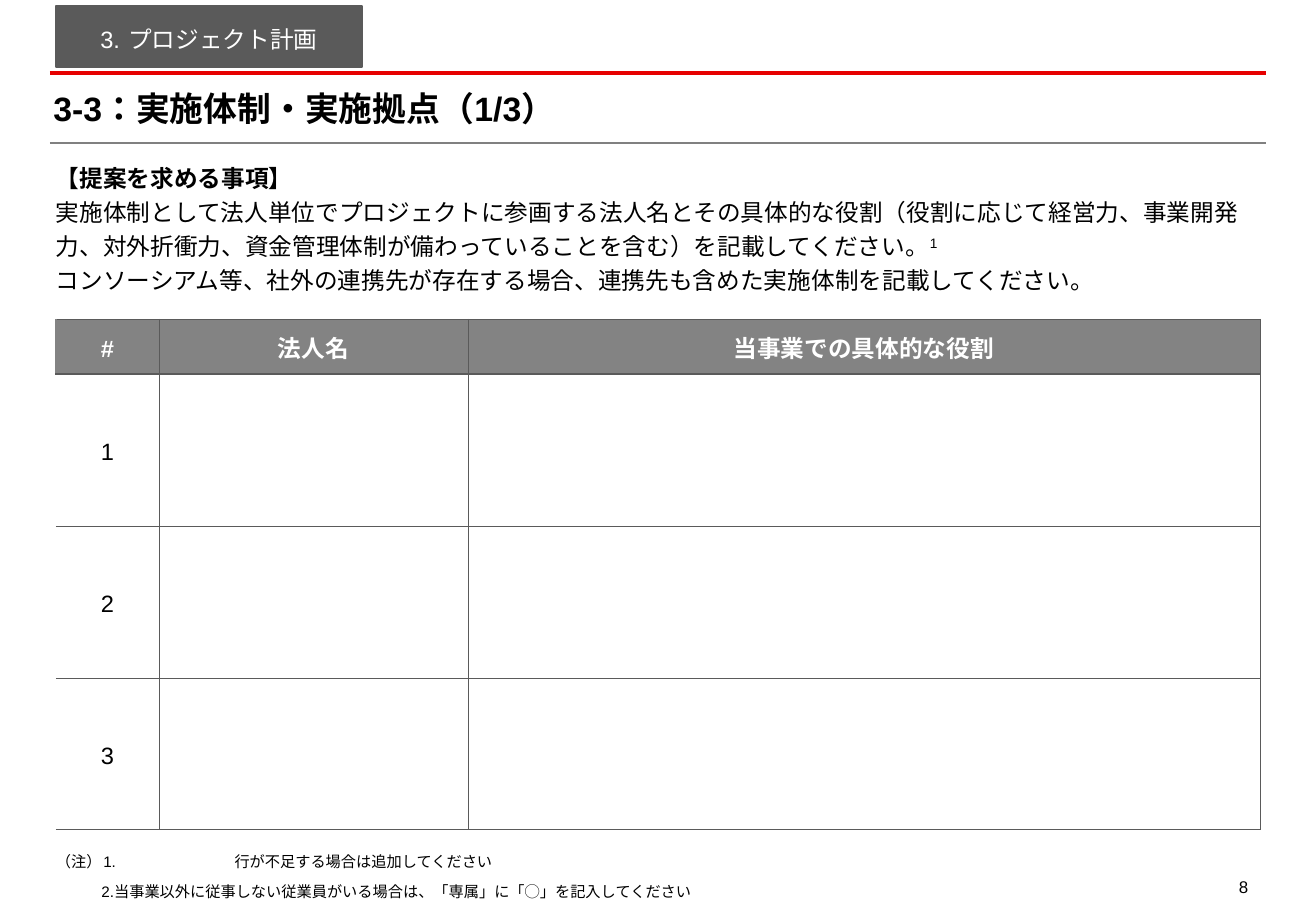
from lxml import etree
from pptx import Presentation
from pptx import util as u
from pptx.dml.color import RGBColor
from pptx.enum import lang, shapes, text
from pptx.oxml import ns

COLORS = {"ink": "000000", "white": "FFFFFF", "red": "E60000", "rule": "808080",
          "tab": "5A5A5A", "head": "838383"}
LEFT, WIDTH = 4.25, 91.5  # content column, percent of slide width
CENTER, RIGHT = text.PP_ALIGN.CENTER, text.PP_ALIGN.RIGHT
MIDDLE, BOTTOM = text.MSO_ANCHOR.MIDDLE, text.MSO_ANCHOR.BOTTOM


def rgb(name):
    return RGBColor.from_string(COLORS[name])


def sub(parent, tag, **attrs):
    return etree.SubElement(parent, ns.qn(tag), **attrs)


class Deck:
    """Slide style and current slide; lengths are percent of the slide's size."""

    font = "Arial"

    def __init__(self, width, height):
        self.prs = Presentation()
        self.prs.slide_width, self.prs.slide_height = u.Inches(width), u.Inches(height)
        self.s = self.prs.slides.add_slide(self.prs.slide_layouts[5])

    def x(self, share):
        return round(self.prs.slide_width * share / 100)

    def y(self, share):
        return round(self.prs.slide_height * share / 100)

    def box(self, x, y, w, h):
        return self.x(x), self.y(y), self.x(w), self.y(h)

    def style(self, p, size, color="ink", bold=False, align=None, spacing=1.2):
        p.alignment = align or text.PP_ALIGN.LEFT
        p.line_spacing = spacing
        for r in p.runs:
            f = r.font
            f.size, f.bold, f.name = u.Pt(size), bold, self.font
            f.color.rgb = rgb(color)
            f.language_id = lang.MSO_LANGUAGE_ID.JAPANESE
            sub(f._element, "a:ea", typeface=self.font)

    def frame(self, tf, margin=0, anchor=None, wrap=True):
        tf.margin_left = tf.margin_right = tf.margin_top = tf.margin_bottom = u.Inches(margin)
        tf.word_wrap = wrap
        tf.auto_size = text.MSO_AUTO_SIZE.NONE
        tf.vertical_anchor = anchor or text.MSO_ANCHOR.TOP

    def hang(self, p, indent):
        pPr = p._p.get_or_add_pPr()
        pPr.set("marL", str(u.Inches(indent)))
        pPr.set("indent", str(-u.Inches(indent)))
        return pPr

    def title(self, box, words):
        sp = self.s.shapes.title
        sp.left, sp.top, sp.width, sp.height = self.box(*box)
        tf = sp.text_frame
        tf.text = words
        self.frame(tf, anchor=MIDDLE)
        self.style(tf.paragraphs[0], 20, bold=True, spacing=1.0)

    def text(self, box, lines, size, anchor=None, align=None, wrap=True, margin=0):
        tf = self.s.shapes.add_textbox(*self.box(*box)).text_frame
        tf.text = "\n".join(lines)
        self.frame(tf, margin, anchor, wrap)
        for p in tf.paragraphs:
            self.style(p, size, align=align)
        return tf.paragraphs

    def rule(self, y, color, weight):
        ln = self.s.shapes.add_connector(shapes.MSO_CONNECTOR.STRAIGHT, self.x(3.79),
                                         self.y(y), self.x(96.21), self.y(y))
        ln.line.color.rgb, ln.line.width = rgb(color), u.Pt(weight)
        sub(ln._element.spPr, "a:effectLst")

    def section_tab(self, box, words, number):
        sp = self.s.shapes.add_shape(shapes.MSO_SHAPE.RECTANGLE, *self.box(*box))
        sp.shadow.inherit = False
        sp.fill.solid()
        sp.fill.fore_color.rgb = sp.line.color.rgb = rgb("tab")
        sp.line.width = u.Pt(1)
        tf = sp.text_frame
        tf.text = words
        self.frame(tf, 0.02, MIDDLE, wrap=False)
        p = tf.paragraphs[0]
        self.style(p, 14, "white", align=CENTER)
        pPr = self.hang(p, 0.23)
        sub(sub(pPr, "a:buClr"), "a:srgbClr", val=COLORS["white"])
        sub(pPr, "a:buFont", typeface=self.font)
        sub(pPr, "a:buAutoNum", type="arabicPeriod", startAt=str(number))

    def borders(self, cell, **sides):
        """Draw each side given as (colour, points), or None for no line."""
        tcPr = cell._tc.get_or_add_tcPr()
        for i, side in enumerate("LRTB"):
            color, weight = sides[side] or (None, 0)
            ln = etree.Element(ns.qn(f"a:ln{side}"), w=str(u.Pt(weight)))
            if color:
                sub(sub(ln, "a:solidFill"), "a:srgbClr", val=COLORS[color])
            else:
                sub(ln, "a:noFill")
            tcPr.insert(i, ln)

    def table(self, box, cols, rows, cells):
        tbl = self.s.shapes.add_table(len(rows), len(cols), *self.box(*box)).table
        tbl.first_row = tbl.horz_banding = False
        for col, w in zip(tbl.columns, cols):
            col.width = self.x(w)
        thin, thick = ("tab", 0.25), ("tab", 1)
        for i, (row, h) in enumerate(zip(tbl.rows, rows)):
            row.height = self.y(h)
            head = i == 0
            for j, cell in enumerate(row.cells):
                cell.text = cells[i][j]
                cell.vertical_anchor = MIDDLE
                cell.margin_left = cell.margin_right = u.Inches(0.08)
                cell.margin_top = cell.margin_bottom = u.Inches(0.08)
                self.style(cell.text_frame.paragraphs[0], 14,
                           "white" if head else "ink", head, CENTER)
                if head:
                    cell.fill.solid()
                    cell.fill.fore_color.rgb = rgb("head")
                else:
                    cell.fill.background()
                edge = ("head", 1) if head else None
                self.borders(cell, L=thin if j else edge, R=thin,
                             T=thick if i < 2 else thin, B=thick if head else thin)


def main():
    d = Deck(10.83, 7.5)
    d.rule(8, "red", 2)
    d.rule(15.73, "rule", 1.25)
    d.section_tab((LEFT, 0.67, 23.27, 6.67), "プロジェクト計画", 3)
    d.title((4.06, 9.6, WIDTH, 4.53), "3-3：実施体制・実施拠点（1/3）")

    heading, request, _ = d.text((LEFT, 17.33, WIDTH, 14.67), [
        "【提案を求める事項】",
        "実施体制として法人単位でプロジェクトに参画する法人名とその具体的な役割"
        "（役割に応じて経営力、事業開発力、対外折衝力、資金管理体制が備わっていることを含む）"
        "を記載してください。",
        "コンソーシアム等、社外の連携先が存在する場合、連携先も含めた実施体制を記載してください。",
    ], 14)
    heading.runs[0].font.bold = True
    mark = request.add_run()
    mark.text = "1"
    mark.font.size, mark.font.name = u.Pt(14), d.font
    mark.font.color.rgb = rgb("ink")
    mark.font._element.set("baseline", "30000")

    header = ["#", "法人名", "当事業での具体的な役割"]
    body = [[str(n), "", ""] for n in range(1, 4)]
    d.table((LEFT, 35.07, WIDTH, 56), [7.85, 23.45, 60.2],
            [6] + [50 / 3] * 3, [header] + body)

    notes = d.text((LEFT, 93.2, 62.14, 5.6), [
        "（注）\t1.\t行が不足する場合は追加してください",
        "　　　2.当事業以外に従事しない従業員がいる場合は、「専属」に「◯」を記入してください",
    ], 9, anchor=BOTTOM)
    for p in notes:
        p.space_before = u.Pt(4.5)
        d.hang(p, 0.39).set("defTabSz", str(u.Inches(1.08)))

    d.text((91.69, 94.4, 4.06, 3.73), ["8"], 10, align=RIGHT, wrap=False, margin=0.1)
    d.prs.save("out.pptx")


if __name__ == "__main__":
    main()
